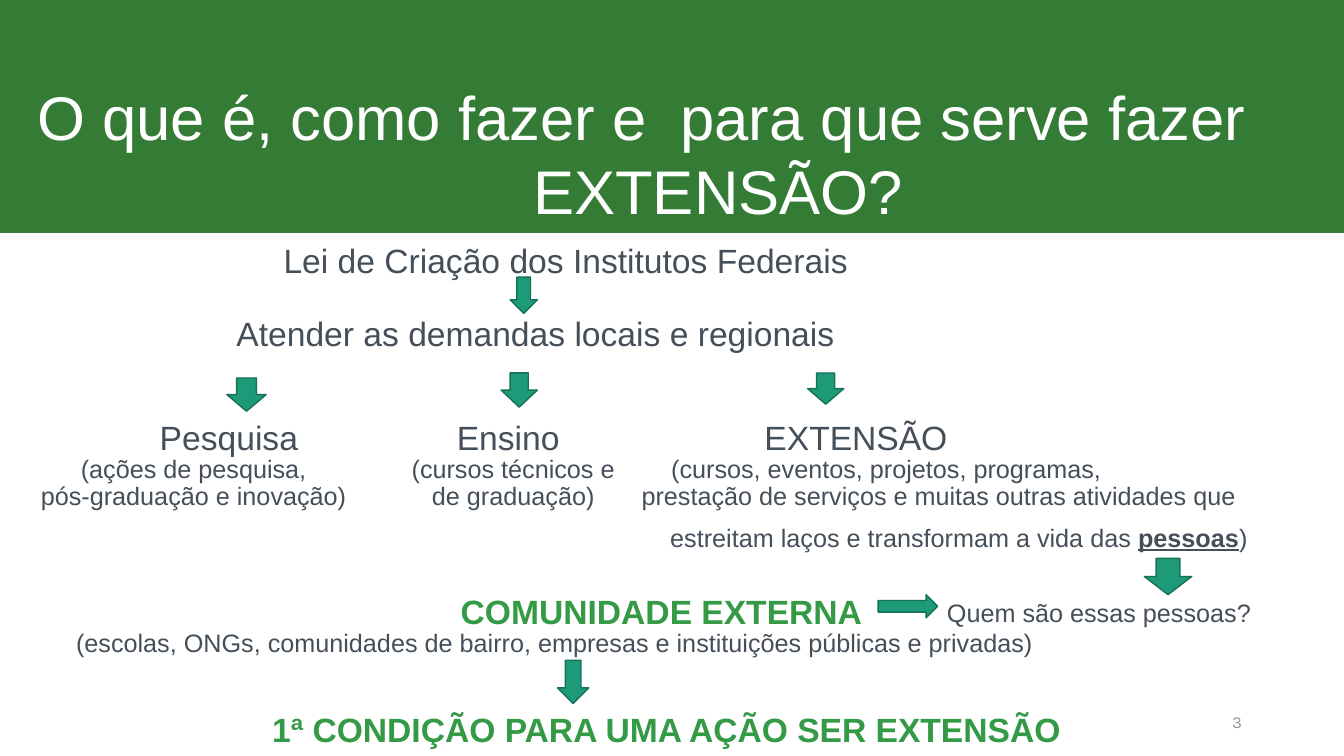
from pptx import Presentation
from pptx.dml.color import RGBColor
from pptx.enum.shapes import MSO_SHAPE
from pptx.enum.text import PP_ALIGN
from pptx.util import Inches, Pt

COLORS = {
    "band": "347C36",
    "title": "FFFFFF",
    "text": "454F59",
    "strong": "349A46",
    "arrow": "1D9A78",
    "edge": "157259",
    "number": "94979B",
}


def color(name):
    return RGBColor.from_string(COLORS[name])


def add_box(slide, left, top, width, height):
    """Add a wrapping text box without insets and return its frame."""
    box = slide.shapes.add_textbox(
        Inches(left), Inches(top), Inches(width), Inches(height))
    frame = box.text_frame
    frame.word_wrap = True
    frame.margin_left = frame.margin_right = 0
    frame.margin_top = frame.margin_bottom = 0
    return frame


def set_font(para, size, tone, bold=False, name="Arial"):
    font = para.font
    font.name = name
    font.size = Pt(size)
    font.bold = bold
    font.color.rgb = color(tone)


def add_label(slide, mid, top, width, lines, size=18, tone="text",
              bold=False, name="Arial"):
    """Add lines of text centred on mid and return the last paragraph."""
    frame = add_box(slide, mid - width / 2, top, width,
                    len(lines) * size / 60)
    for i, line in enumerate(lines):
        para = frame.add_paragraph() if i else frame.paragraphs[0]
        para.text = line
        para.alignment = PP_ALIGN.CENTER
        if len(lines) > 1:
            para.line_spacing = 0.9
        set_font(para, size, tone, bold, name)
    return para


def add_shape(slide, kind, left, top, width, height, fill, edge=None):
    shape = slide.shapes.add_shape(
        kind, Inches(left), Inches(top), Inches(width), Inches(height))
    shape.shadow.inherit = False
    shape.fill.solid()
    shape.fill.fore_color.rgb = color(fill)
    if edge:
        shape.line.color.rgb = color(edge)
        shape.line.width = Pt(1)
    else:
        shape.line.fill.background()


def add_title(slide):
    add_shape(slide, MSO_SHAPE.RECTANGLE, 0, 0, 13.33, 2.31, "band")
    frame = add_box(slide, 0.37, 0.78, 12.6, 1.5)
    lines = [("O que é, como fazer e  para que serve fazer", 0),
             ("EXTENSÃO?", 4.92)]
    for i, (line, indent) in enumerate(lines):
        para = frame.add_paragraph() if i else frame.paragraphs[0]
        para.text = line
        para.line_spacing = Pt(53)
        para._p.get_or_add_pPr().set("marL", str(Inches(indent)))
        set_font(para, 44, "title")


def add_arrows(slide):
    down = [
        (5.06, 2.75, 0.27, 0.36),
        (2.25, 3.75, 0.39, 0.33),
        (4.97, 3.7, 0.36, 0.34),
        (8.01, 3.7, 0.36, 0.31),
        (11.35, 5.54, 0.47, 0.36),
        (5.53, 6.55, 0.31, 0.43),
    ]
    for place in down:
        add_shape(slide, MSO_SHAPE.DOWN_ARROW, *place, "arrow", "edge")
    add_shape(slide, MSO_SHAPE.RIGHT_ARROW, 8.71, 5.9, 0.59, 0.23,
              "arrow", "edge")


def add_texts(slide):
    heads = [
        (5.61, 2.38, 6.2, "Lei de Criação dos Institutos Federais"),
        (5.31, 3.1, 6.4, "Atender as demandas locais e regionais"),
        (2.27, 4.14, 2, "Pesquisa"),
        (5.04, 4.14, 2, "Ensino"),
        (8.49, 4.14, 2.4, "EXTENSÃO"),
    ]
    for mid, top, width, line in heads:
        add_label(slide, mid, top, width, [line], 24)

    details = [
        (1.92, 4.53, 3.2, ["(ações de pesquisa,",
                           "pós-graduação e inovação)"]),
        (5.09, 4.53, 2.3, ["(cursos técnicos e", "de graduação)"]),
        (8.79, 4.5, 4.6, ["(cursos, eventos, projetos, programas,"]),
        (9.31, 4.77, 6.2, ["prestação de serviços e muitas outras "
                           "atividades que"]),
        (10.9, 5.93, 3.3, ["Quem são essas pessoas?"]),
        (5.5, 6.22, 9.9, ["(escolas, ONGs, comunidades de bairro, empresas "
                          "e instituições públicas e privadas)"]),
    ]
    for mid, top, width, lines in details:
        add_label(slide, mid, top, width, lines)

    bonds = add_label(slide, 9.51, 5.18, 6.2,
                      ["estreitam laços e transformam a vida das "])
    people = bonds.add_run()
    people.text = "pessoas"
    people.font.bold = people.font.underline = True
    bonds.add_run().text = ")"

    add_label(slide, 6.56, 5.86, 4.3, ["COMUNIDADE EXTERNA"],
              24, "strong", True)
    add_label(slide, 6.61, 7.03, 8.4,
              ["1ª CONDIÇÃO PARA UMA AÇÃO SER EXTENSÃO"],
              24, "strong", True)
    add_label(slide, 12.27, 7.06, 0.4, ["3"], 12, "number", name="Karla")


def main():
    deck = Presentation()
    deck.slide_width = Inches(13.33)
    deck.slide_height = Inches(7.5)
    slide = deck.slides.add_slide(deck.slide_layouts[6])
    add_title(slide)
    add_texts(slide)
    add_arrows(slide)
    deck.save("out.pptx")


if __name__ == "__main__":
    main()
